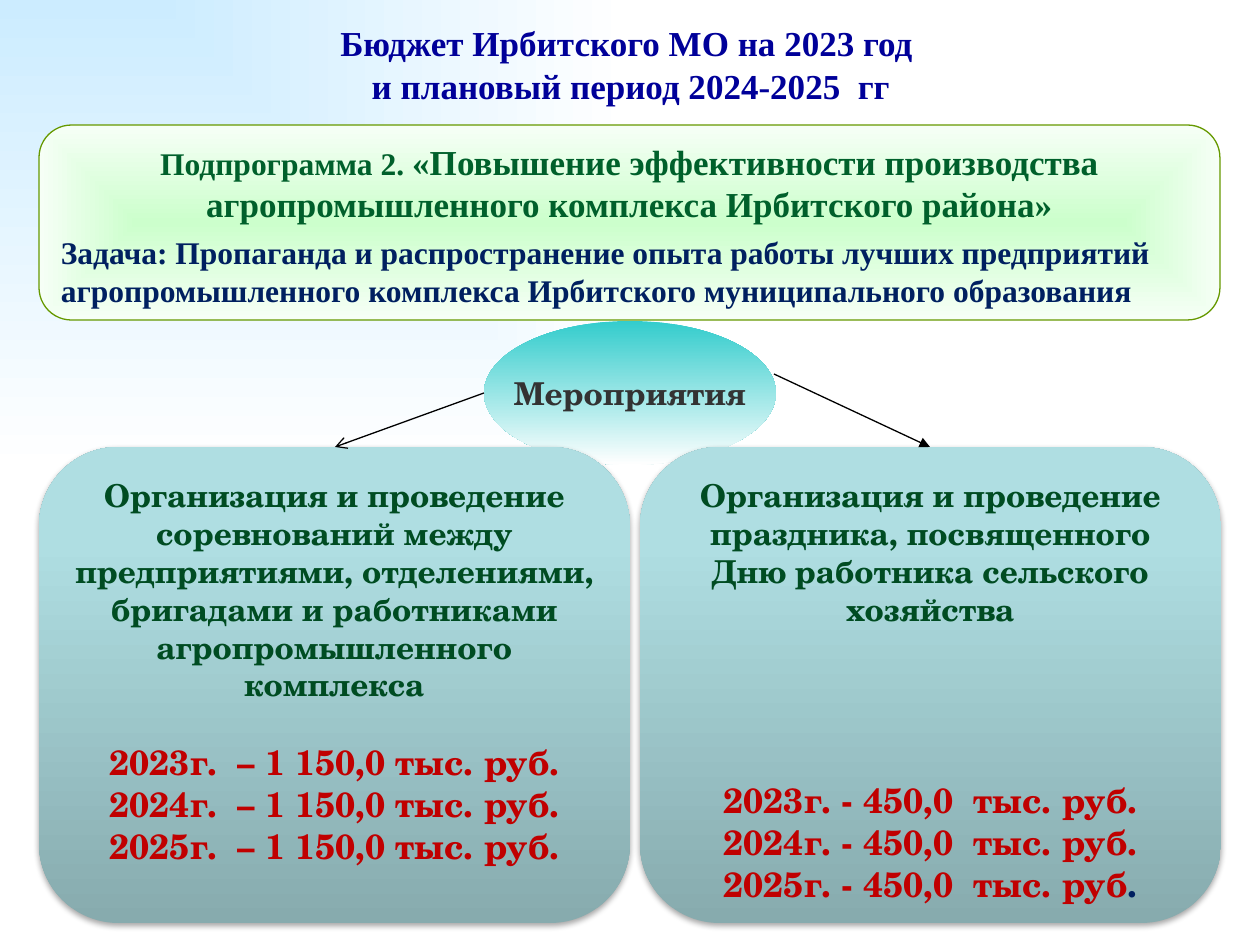
from pptx import Presentation, util as u
from pptx.dml.color import RGBColor
from pptx.enum import shapes, text
from pptx.oxml import parse_xml
from pptx.oxml.ns import nsdecls, qn

SCALE = 914400 / 126
SERIF = "Times New Roman"
SCHOOL = "TeX Gyre Schola"

NAVY = RGBColor(0x00, 0x00, 0x99)
DARK_BLUE = RGBColor(0x00, 0x20, 0x60)
GREEN = RGBColor(0x00, 0x60, 0x2B)
DARK_GREEN = RGBColor(0x00, 0x4C, 0x22)
OLIVE = RGBColor(0x66, 0x99, 0x00)
RED = RGBColor(0xC0, 0x00, 0x00)
GRAY = RGBColor(0x33, 0x33, 0x33)
BLACK = RGBColor(0x00, 0x00, 0x00)
WHITE = RGBColor(0xFF, 0xFF, 0xFF)
SKY = RGBColor(0xCC, 0xEC, 0xFF)
MINT = RGBColor(0xCC, 0xFF, 0xCC)
PALE_MINT = RGBColor(0xF6, 0xFF, 0xF6)
TURQUOISE = RGBColor(0x33, 0xCC, 0xCC)
CARD_STOPS = [
    (0, RGBColor(0x87, 0xAB, 0xAE)),
    (80, RGBColor(0xAF, 0xDE, 0xE2)),
    (100, RGBColor(0xAF, 0xE0, 0xE4)),
]


def px(n):
    return u.Emu(round(n * SCALE))


def linear(angle):
    return f'<a:lin ang="{angle * 60000}" scaled="0"/>'


def radial(kind, *sides):
    rect = " ".join(f'{k}="{v * 1000}"' for k, v in zip("ltrb", sides))
    return f'<a:path path="{kind}"><a:fillToRect {rect}/></a:path>'


def set_gradient(fill, props, stops, direction):
    fill.solid()
    gs = "".join(
        f'<a:gs pos="{pos * 1000}"><a:srgbClr val="{color}"/></a:gs>'
        for pos, color in stops
    )
    grad = parse_xml(
        f'<a:gradFill {nsdecls("a")} rotWithShape="1">'
        f"<a:gsLst>{gs}</a:gsLst>{direction}</a:gradFill>"
    )
    props.replace(props.find(qn("a:solidFill")), grad)


def add_gradient_shape(s, kind, box, stops, direction, line=None):
    sp = s.shapes.add_shape(kind, *map(px, box))
    sp.shadow.inherit = False
    set_gradient(sp.fill, sp.element.spPr, stops, direction)
    if line is None:
        sp.line.fill.background()
    else:
        sp.line.color.rgb = line
        sp.line.width = u.Pt(0.75)
    sp.text_frame.word_wrap = True
    sp.text_frame.vertical_anchor = text.MSO_ANCHOR.TOP
    return sp


def write(tf, content, face, size, color, align=text.PP_ALIGN.CENTER, before=0, after=0):
    p = tf.paragraphs[0] if not tf.text else tf.add_paragraph()
    p.alignment = align
    p.space_before, p.space_after = u.Pt(before), u.Pt(after)
    p.font.name, p.font.size, p.font.bold = face, u.Pt(size), True
    p.font.color.rgb = color
    p.text = content
    return p


def add_title(s):
    tf = s.shapes.add_textbox(*map(px, (64, 22, 1134, 84))).text_frame
    tf.word_wrap = True
    tf.margin_top = tf.margin_bottom = 0
    tf.vertical_anchor = text.MSO_ANCHOR.MIDDLE
    write(tf, "Бюджет Ирбитского МО на 2023 год \vи плановый период 2024-2025  гг", SERIF, 20, NAVY)


def add_subprogram(s):
    sp = add_gradient_shape(
        s, shapes.MSO_SHAPE.ROUNDED_RECTANGLE, (39, 125, 1181, 195),
        [(0, MINT), (100, PALE_MINT)], radial("shape", 50, 50, 50, 50), OLIVE,
    )
    tf = sp.text_frame
    p = write(tf, "Подпрограмма 2. ", SERIF, 20, GREEN, before=2, after=1)
    p.runs[0].font.size = u.Pt(18)
    r = p.add_run()
    r.text = "«Повышение эффективности производства агропромышленного комплекса Ирбитского района»"
    write(
        tf,
        "Задача: Пропаганда и распространение опыта работы лучших предприятий "
        "агропромышленного комплекса Ирбитского муниципального образования",
        SERIF, 18, DARK_BLUE, text.PP_ALIGN.LEFT, 3.6, 1,
    )


def add_events(s):
    sp = add_gradient_shape(
        s, shapes.MSO_SHAPE.OVAL, (484, 321, 292, 144),
        [(0, TURQUOISE), (100, WHITE)], linear(90),
    )
    tf = sp.text_frame
    tf.word_wrap = False
    tf.vertical_anchor = text.MSO_ANCHOR.MIDDLE
    write(tf, "Мероприятия", SCHOOL, 18, GRAY)


def add_card(s, left, width, heading, gap, amounts):
    sp = add_gradient_shape(
        s, shapes.MSO_SHAPE.ROUNDED_RECTANGLE, (left, 447, width, 476),
        CARD_STOPS, linear(270),
    )
    sp.element.spPr.find(qn("a:effectLst")).append(parse_xml(
        f'<a:outerShdw {nsdecls("a")} blurRad="{u.Pt(3.1)}" dist="{u.Pt(1.8)}" '
        'dir="5400000" rotWithShape="0"><a:srgbClr val="000000">'
        '<a:alpha val="35000"/></a:srgbClr></a:outerShdw>'
    ))
    tf = sp.text_frame
    write(tf, heading, SCHOOL, 18, DARK_GREEN)
    for i, amount in enumerate(amounts):
        p = write(tf, amount, SCHOOL, 20, RED, before=0 if i else gap)
    return p


def add_arrow(s, start, end, head):
    c = s.shapes.add_connector(shapes.MSO_CONNECTOR.STRAIGHT, *map(px, start + end))
    c.line.color.rgb = BLACK
    c.line.width = u.Pt(0.75)
    c.line._get_or_add_ln().append(parse_xml(f'<a:tailEnd {nsdecls("a")} type="{head}"/>'))
    c.element.spPr.append(parse_xml(f'<a:effectLst {nsdecls("a")}/>'))


def main():
    prs = Presentation()
    prs.slide_width, prs.slide_height = px(1260), px(945)
    s = prs.slides.add_slide(prs.slide_layouts[6])
    fill = s.background.fill
    fill.solid()
    set_gradient(
        fill, s.element.xpath(".//p:bgPr")[0],
        [(0, SKY), (100, WHITE)], radial("rect", 0, 0, 100, 100),
    )
    add_title(s)
    add_subprogram(s)
    add_events(s)
    years = (2023, 2024, 2025)
    add_card(
        s, 39, 591,
        "Организация и проведение соревнований между предприятиями, отделениями, "
        "бригадами и работниками агропромышленного комплекса",
        21.5, [f"{year}г.  – 1 150,0 тыс. руб." for year in years],
    )
    p = add_card(
        s, 640, 581,
        "Организация и проведение праздника, посвященного Дню работника сельского хозяйства",
        86, [f"{year}г. - 450,0  тыс. руб" + "." * (year < years[-1]) for year in years],
    )
    r = p.add_run()
    r.text = "."
    r.font.color.rgb = DARK_BLUE
    add_arrow(s, (484, 393), (335, 447), "arrow")
    add_arrow(s, (774, 374), (930, 447), "triangle")
    prs.save("out.pptx")


if __name__ == "__main__":
    main()
